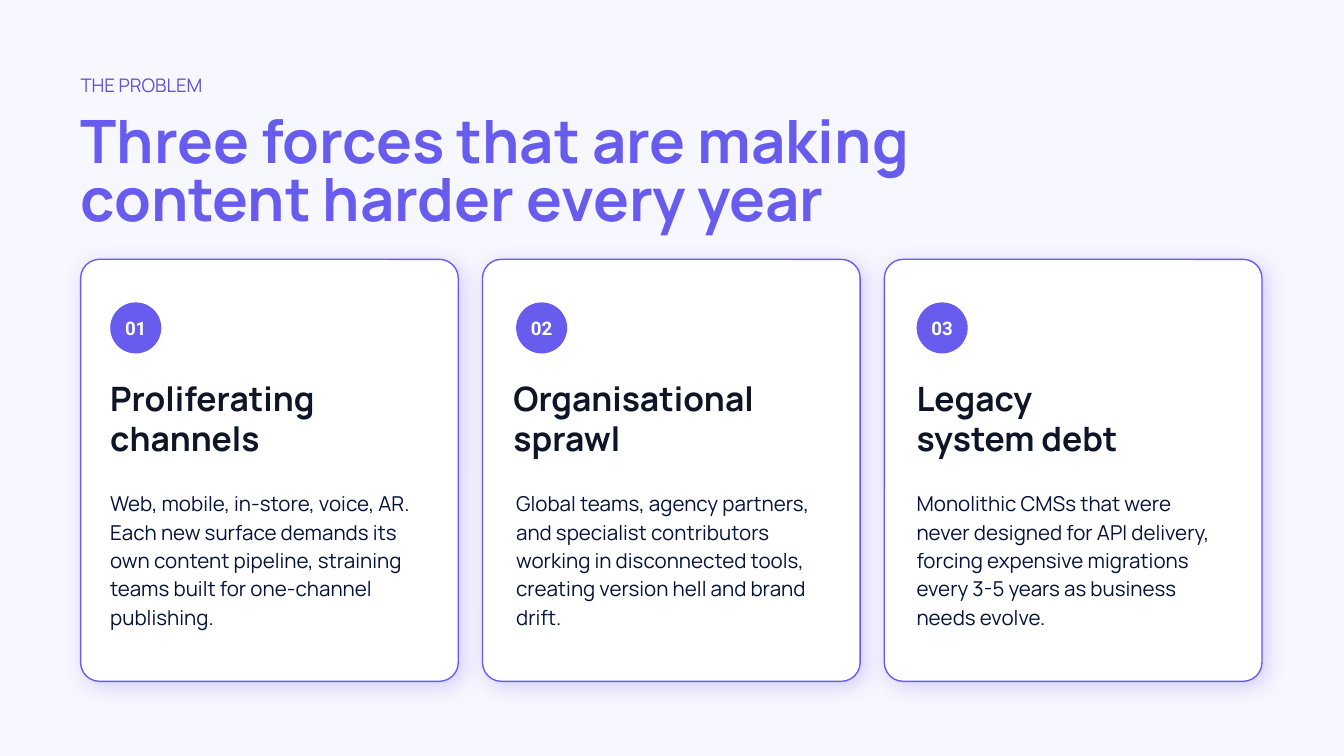
from lxml.etree import SubElement
from pptx import Presentation
from pptx.dml.color import RGBColor
from pptx.enum.shapes import MSO_SHAPE as Shape
from pptx.enum.text import MSO_ANCHOR as Anchor, MSO_AUTO_SIZE as AutoSize, PP_ALIGN as Align
from pptx.oxml.ns import qn
from pptx.util import Inches, Pt

ACCENT, WHITE, INK, NAVY = "685CEF", "FFFFFF", "0D1526", "05133A"
CARD_LEFT, CARD_TOP, CARD_WIDTH, CARD_HEIGHT, CARD_STEP = 0.6, 1.93, 2.81, 3.14, 2.99

# number, content left, heading left, heading, text width, text
CARDS = [
    ("01", 0.82, 0.82, "Proliferating channels", 2.33,
     "Web, mobile, in-store, voice, AR. Each new surface demands its own content "
     "pipeline, straining teams built for one-channel publishing."),
    ("02", 3.84, 3.82, "Organisational sprawl", 2.28,
     "Global teams, agency partners, and specialist contributors working in "
     "disconnected tools, creating version hell and brand drift."),
    ("03", 6.82, 6.82, "Legacy\vsystem debt", 2.23,
     "Monolithic CMSs that were never designed for API delivery, forcing expensive "
     "migrations every 3-5 years as business needs evolve."),
]


def color(value):
    return RGBColor.from_string(value)


def write(shape, text, size, fill, font="Manrope", bold=False,
          align=Align.LEFT, anchor=Anchor.TOP, spacing=1.0):
    frame = shape.text_frame
    frame.auto_size = AutoSize.NONE
    frame.word_wrap = True
    frame.vertical_anchor = anchor
    frame.margin_left = frame.margin_right = frame.margin_top = frame.margin_bottom = 0
    para = frame.paragraphs[0]
    para.text = text
    para.alignment = align
    para.line_spacing = spacing
    for span in para.runs:
        span.font.name = font
        span.font.size = Pt(size)
        span.font.bold = bold
        span.font.color.rgb = color(fill)


def add_soft_shadow(shape):
    effects = shape._element.spPr.find(qn("a:effectLst"))
    shadow = SubElement(effects, qn("a:outerShdw"), blurRad=str(Pt(11.2)), dist=str(Pt(3)),
                        dir=str(45 * 60000), algn="bl", rotWithShape="0")
    tint = SubElement(shadow, qn("a:srgbClr"), val=ACCENT)
    SubElement(tint, qn("a:alpha"), val="25000")


class SlideBuilder:
    def __init__(self, deck):
        self.page = deck.slides.add_slide(deck.slide_layouts[5])
        background = self.page.background.fill
        background.solid()
        background.fore_color.rgb = color("F7F7FF")

    def title(self, text, left, top, width, height, **style):
        box = self.page.shapes.title
        box.left, box.top, box.width, box.height = map(Inches, (left, top, width, height))
        write(box, text, **style)

    def text(self, text, left, top, width, height, **style):
        box = self.page.shapes.add_textbox(*map(Inches, (left, top, width, height)))
        write(box, text, **style)

    def shape(self, kind, left, top, width, height, fill):
        shape = self.page.shapes.add_shape(kind, *map(Inches, (left, top, width, height)))
        shape.shadow.inherit = False
        shape.fill.solid()
        shape.fill.fore_color.rgb = color(fill)
        return shape

    def card(self, left):
        panel = self.shape(Shape.ROUNDED_RECTANGLE, left, CARD_TOP, CARD_WIDTH, CARD_HEIGHT, WHITE)
        panel.adjustments[0] = 0.05
        panel.line.color.rgb = color(ACCENT)
        panel.line.width = Pt(0.75)
        add_soft_shadow(panel)

    def badge(self, number, left, top):
        circle = self.shape(Shape.OVAL, left, top, 0.38, 0.38, ACCENT)
        circle.line.fill.background()
        write(circle, number, size=10, fill=WHITE, font="Roboto", bold=True,
              align=Align.CENTER, anchor=Anchor.MIDDLE)


def main():
    deck = Presentation()
    deck.slide_width = Inches(10)
    deck.slide_height = deck.slide_width * 9 // 16
    slide = SlideBuilder(deck)
    slide.text("THE PROBLEM", 0.6, 0.48, 8.8, 0.3, size=10, fill="6352D8", anchor=Anchor.MIDDLE)
    slide.title("Three forces that are making \vcontent harder every year", 0.6, 0.8, 8.69, 1.01,
                size=32, fill=ACCENT, bold=True, anchor=Anchor.MIDDLE, spacing=0.8)
    for index, (number, left, heading_left, heading, width, text) in enumerate(CARDS):
        slide.card(CARD_LEFT + index * CARD_STEP)
        slide.badge(number, left, 2.25)
        slide.text(heading, heading_left, 2.81, 2.52, 0.6, size=18, fill=INK, bold=True)
        slide.text(text, left, 3.63, width, 1.23, size=11, fill=NAVY, spacing=1.15)
    deck.save("out.pptx")


if __name__ == "__main__":
    main()
